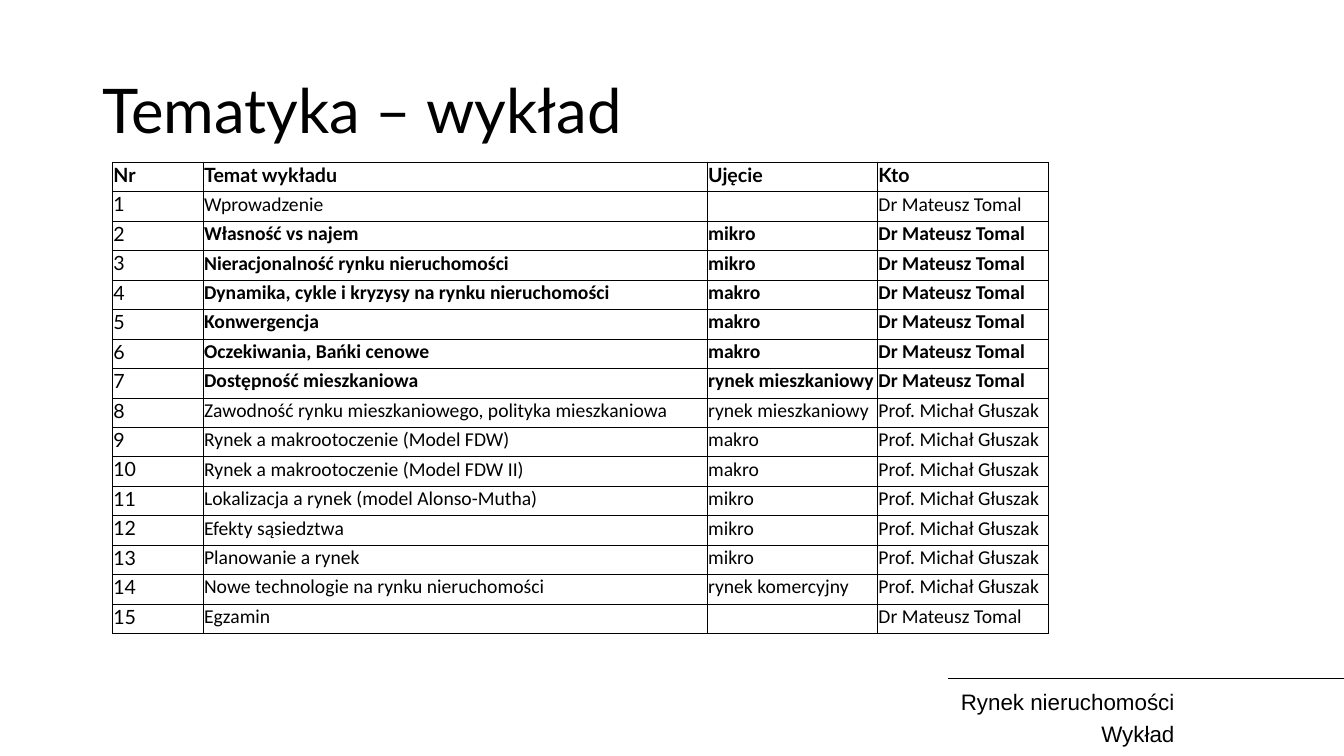
import pptx
import pptx.util
import pptx.dml.color
import pptx.enum.shapes
import pptx.enum.text
import pptx.oxml.ns
from lxml import etree

Pt = pptx.util.Pt
ANCHOR = pptx.enum.text.MSO_ANCHOR
BLACK, WHITE = "000000", "FFFFFF"


def color(value):
    return pptx.dml.color.RGBColor.from_string(value)


def set_font(p, name, size, bold=False):
    p.font.name = name
    p.font.size = Pt(size)
    p.font.bold = bold
    p.font.color.rgb = color(BLACK)


prs = pptx.Presentation()
prs.slide_width, prs.slide_height = Pt(960), Pt(540)
s = prs.slides.add_slide(prs.slide_layouts[6])

# Title
sp = s.shapes.add_textbox(Pt(66), Pt(28.8), Pt(828), Pt(104.4))
tf = sp.text_frame
tf.word_wrap = True
tf.vertical_anchor = ANCHOR.MIDDLE
p = tf.paragraphs[0]
p.text = "Tematyka – wykład"
p.line_spacing = 0.9
set_font(p, "Lato", 44)

# Lecture topics: topic, approach, lecturer
tomal, gluszak = "Dr Mateusz Tomal", "Prof. Michał Głuszak"
lectures = [
    ("Wprowadzenie", "", tomal),
    ("Własność vs najem", "mikro", tomal),
    ("Nieracjonalność rynku nieruchomości", "mikro", tomal),
    ("Dynamika, cykle i kryzysy na rynku nieruchomości", "makro", tomal),
    ("Konwergencja", "makro", tomal),
    ("Oczekiwania, Bańki cenowe", "makro", tomal),
    ("Dostępność mieszkaniowa", "rynek mieszkaniowy", tomal),
    ("Zawodność rynku mieszkaniowego, polityka mieszkaniowa", "rynek mieszkaniowy", gluszak),
    ("Rynek a makrootoczenie (Model FDW)", "makro", gluszak),
    ("Rynek a makrootoczenie (Model FDW II)", "makro", gluszak),
    ("Lokalizacja a rynek (model Alonso-Mutha)", "mikro", gluszak),
    ("Efekty sąsiedztwa", "mikro", gluszak),
    ("Planowanie a rynek", "mikro", gluszak),
    ("Nowe technologie na rynku nieruchomości", "rynek komercyjny", gluszak),
    ("Egzamin", "", tomal),
]
rows = [("Nr", "Temat wykładu", "Ujęcie", "Kto")]
rows += [(str(n), *lecture) for n, lecture in enumerate(lectures, 1)]
bold_rows = {0, *range(2, 8)}
thick_edges = {(0, "B"), (1, "T"), (4, "B"), (5, "T")}  # in the approach column

# Table
widths = [64.8, 360, 121.7, 121.7]
row_height = 20.2
table = s.shapes.add_table(len(rows), len(widths), Pt(80.4), Pt(115.9),
                           Pt(sum(widths)), Pt(row_height * len(rows))).table
table.first_row = table.horz_banding = False
for column, width in zip(table.columns, widths):
    column.width = Pt(width)

for i, row in enumerate(rows):
    table.rows[i].height = Pt(row_height)
    for j, text in enumerate(row):
        cell = table.cell(i, j)
        cell.vertical_anchor = ANCHOR.BOTTOM
        cell.margin_left = cell.margin_right = cell.margin_top = Pt(0.6)
        cell.margin_bottom = Pt(3.6)
        p = cell.text_frame.paragraphs[0]
        p.text = text
        set_font(p, "Lato" if i == 0 or j == 0 else "Calibri", 14,
                 i == 0 or (i in bold_rows and j > 0))
        if not text:
            p._p.get_or_add_endParaRPr().set("sz", "1400")
        # Cell borders
        tcPr = cell._tc.get_or_add_tcPr()
        for side in "LRTB":
            thick = j == 2 and (i, side) in thick_edges
            ln = etree.SubElement(tcPr, pptx.oxml.ns.qn("a:ln" + side),
                                  w=str(Pt(1 if thick else 0.5)))
            fill = etree.SubElement(ln, pptx.oxml.ns.qn("a:solidFill"))
            etree.SubElement(fill, pptx.oxml.ns.qn("a:srgbClr"), val=BLACK)
        cell.fill.background()

# Footer line
line = s.shapes.add_connector(pptx.enum.shapes.MSO_CONNECTOR.STRAIGHT,
                              Pt(960), Pt(484.6), Pt(677.5), Pt(484.6))
line.line.color.rgb = color(BLACK)
line.line.width = Pt(1)
etree.SubElement(line._element.spPr, pptx.oxml.ns.qn("a:effectLst"))

# Footer text
sp = s.shapes.add_shape(pptx.enum.shapes.MSO_SHAPE.RECTANGLE,
                        Pt(668.2), Pt(490.3), Pt(177.8), Pt(44.6))
sp.shadow.inherit = False
sp.fill.background()
sp.line.color.rgb = color(WHITE)
sp.line.width = Pt(0.75)
tf = sp.text_frame
tf.word_wrap = True
tf.vertical_anchor = ANCHOR.MIDDLE
tf.text = "Rynek nieruchomości\nWykład"
for p in tf.paragraphs:
    p.alignment = pptx.enum.text.PP_ALIGN.RIGHT
    set_font(p, "Arial", 16)
tf.paragraphs[1].space_before = Pt(3.2)

prs.save("out.pptx")
